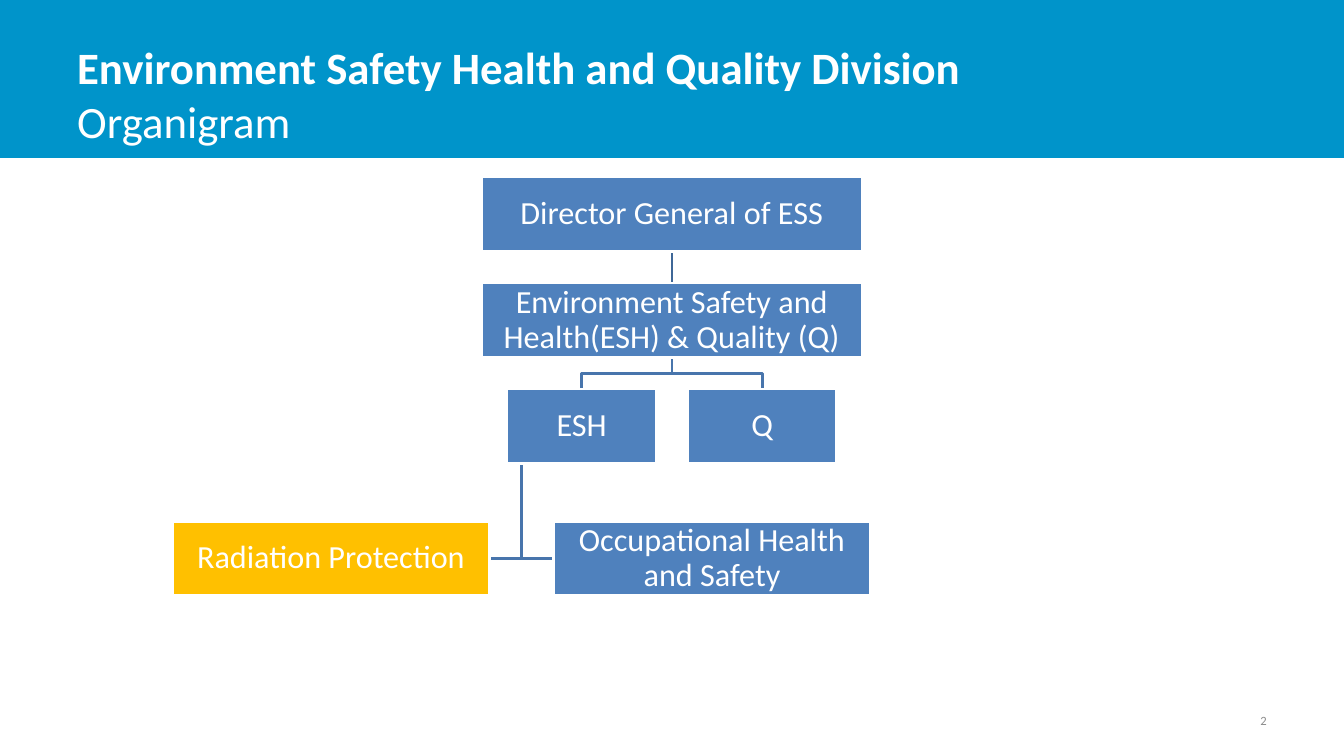
from lxml import etree
from pptx import Presentation
from pptx.dml.color import RGBColor
from pptx.enum import shapes, text as text_enum
from pptx.oxml import ns
from pptx.util import Pt


def color(value):
    """Turn a hex string into a colour."""
    return RGBColor.from_string(value)


def write(paragraph, text, size=23, fill="FFFFFF", bold=False, font="Calibri"):
    """Add one formatted run to a paragraph."""
    run = paragraph.add_run()
    run.text = text
    run.font.name = font
    run.font.size = Pt(size)
    run.font.bold = bold
    run.font.color.rgb = color(fill)


class Organigram:
    """Hold the chart style and the current slide."""

    blue, amber, white = "4F81BD", "FFC000", "FFFFFF"
    branch, trunk = "4875AC", "3F6797"
    line_width = 2
    box_height = 53.3

    def __init__(self, slide):
        """Keep the slide that is drawn on."""
        self.slide = slide

    def rectangle(self, left, top, width, height, fill, border=None):
        """Draw a filled rectangle."""
        shape = self.slide.shapes.add_shape(
            shapes.MSO_SHAPE.RECTANGLE, Pt(left), Pt(top), Pt(width), Pt(height))
        shape.shadow.inherit = False
        shape.fill.solid()
        shape.fill.fore_color.rgb = color(fill)
        if border:
            shape.line.color.rgb = color(border)
            shape.line.width = Pt(self.line_width)
        else:
            shape.line.fill.background()
        return shape

    def box(self, label, center, top, width, fill=blue):
        """Draw a labelled unit of the organisation."""
        shape = self.rectangle(center - width / 2, top, width, self.box_height, fill, self.white)
        frame = shape.text_frame
        frame.word_wrap = True
        frame.vertical_anchor = text_enum.MSO_ANCHOR.MIDDLE
        frame.margin_left = frame.margin_right = Pt(1.15)
        frame.margin_top = frame.margin_bottom = Pt(1.15)
        paragraph = frame.paragraphs[0]
        paragraph.alignment = text_enum.PP_ALIGN.CENTER
        paragraph.line_spacing = 0.9
        write(paragraph, label)
        return shape

    def text_box(self, left, top, width, height, align):
        """Add a text box and return its paragraph."""
        frame = self.slide.shapes.add_textbox(Pt(left), Pt(top), Pt(width), Pt(height)).text_frame
        frame.word_wrap = True
        frame.vertical_anchor = text_enum.MSO_ANCHOR.MIDDLE
        paragraph = frame.paragraphs[0]
        paragraph.alignment = align
        return paragraph

    def elbow(self, *points):
        """Draw an open bent line through the points."""
        start, *rest = [(Pt(x), Pt(y)) for x, y in points]
        builder = self.slide.shapes.build_freeform(*start)
        builder.add_line_segments(rest, close=False)
        shape = builder.convert_to_shape()
        shape.shadow.inherit = False
        shape.fill.background()
        shape.line.color.rgb = color(self.branch)
        shape.line.width = Pt(self.line_width)

    def straight(self, x, top, bottom):
        """Draw a vertical connector."""
        connector = self.slide.shapes.add_connector(
            shapes.MSO_CONNECTOR.STRAIGHT, Pt(x), Pt(top), Pt(x), Pt(bottom))
        connector.line.color.rgb = color(self.trunk)
        connector.line.width = Pt(self.line_width)
        etree.SubElement(connector._element.spPr, ns.qn("a:effectLst"))
        return connector


def main():
    """Build the organigram slide."""
    presentation = Presentation()
    presentation.slide_width, presentation.slide_height = Pt(960), Pt(540)
    chart = Organigram(presentation.slides.add_slide(presentation.slide_layouts[6]))

    chart.rectangle(0, 0, 960, 112.8, "0094CA")
    title = chart.text_box(48, 21.6, 749.5, 90, text_enum.PP_ALIGN.LEFT)
    write(title, "Environment Safety Health and Quality Division", size=32, bold=True)
    title.add_line_break()
    write(title, "Organigram", size=32)

    center, spread = 480, 64.5
    director_top, division_top, section_top = (126.3 + 75.8 * level for level in range(3))
    group_top = 372.3
    division_bottom = division_top + chart.box_height
    section_bottom = section_top + chart.box_height
    fork = (division_bottom + section_top) / 2
    group_middle = group_top + chart.box_height / 2
    stem, group_width = 372.8, 226.8
    radiation, safety = 236.5, 508.7

    for x in (center + spread, center - spread):
        chart.elbow((center, division_bottom), (center, fork), (x, fork), (x, section_top))
    for edge in (radiation + group_width / 2, safety - group_width / 2):
        chart.elbow((stem, section_bottom), (stem, group_middle), (edge, group_middle))
    link = chart.straight(center, director_top + chart.box_height, division_top)

    director = chart.box("Director General of ESS", center, director_top, 272)
    division = chart.box("Environment Safety and Health(ESH) & Quality (Q)", center, division_top, 272)
    link.begin_connect(director, 2)
    link.end_connect(division, 0)
    chart.box("ESH", center - spread, section_top, 106.6)
    chart.box("Occupational Health and Safety", safety, group_top, group_width)
    chart.box("Radiation Protection", radiation, group_top, group_width, chart.amber)
    chart.box("Q", center + spread, section_top, 106.6)

    number = chart.text_box(688, 500.5, 224, 28.8, text_enum.PP_ALIGN.RIGHT)
    write(number, "2", size=9, fill="8C8C8C")
    presentation.save("out.pptx")


if __name__ == "__main__":
    main()
